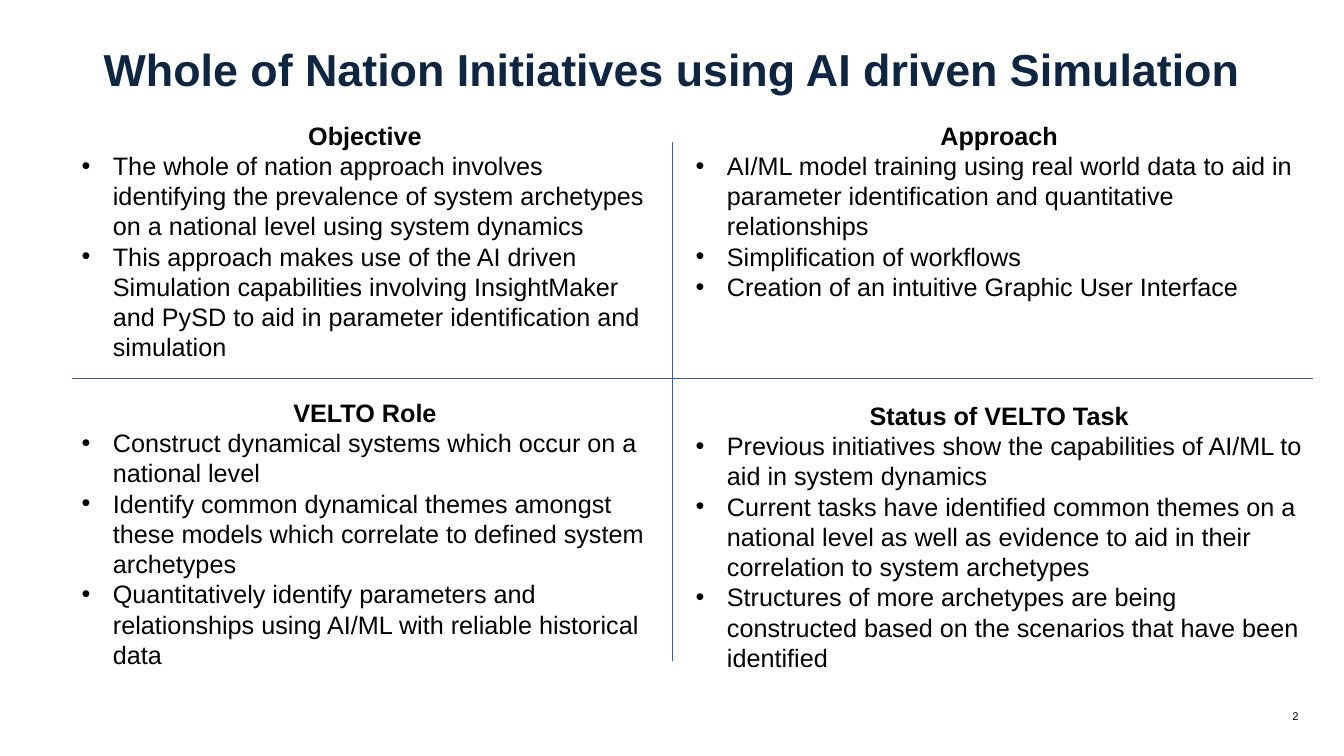
from dataclasses import dataclass

from lxml import etree
from pptx import Presentation
from pptx import util as u
from pptx.dml.color import RGBColor
from pptx.enum import shapes, text
from pptx.oxml.ns import qn

INK, NAVY, BLUE = "000000", "0E2641", "335EAC"
LEFT, RIGHT = (0.71, 5.82), (6.8, 6.22)


@dataclass
class Panel:
    col: tuple[float, float]
    top: float
    high: float
    head: str
    items: list[str]


@dataclass
class Rule:
    start: tuple[float, float]
    end: tuple[float, float]


PANELS = [
    Panel(LEFT, 1.14, 3.13, "Objective", [
        "The whole of nation approach involves identifying the prevalence of system archetypes "
        "on a national level using system dynamics",
        "This approach makes use of the AI driven Simulation capabilities involving InsightMaker "
        "and PySD to aid in parameter identification and simulation",
    ]),
    Panel(RIGHT, 1.14, 1.92, "Approach", [
        "AI/ML model training using real world data to aid in parameter identification "
        "and quantitative relationships",
        "Simplification of workflows",
        "Creation of an intuitive Graphic User Interface",
    ]),
    Panel(LEFT, 3.89, 2.83, "VELTO Role", [
        "Construct dynamical systems which occur on a national level",
        "Identify common dynamical themes amongst these models which correlate to defined "
        "system archetypes",
        "Quantitatively identify parameters and relationships using AI/ML with reliable "
        "historical data",
    ]),
    Panel(RIGHT, 3.92, 3.13, "Status of VELTO Task", [
        "Previous initiatives show the capabilities of AI/ML to aid in system dynamics",
        "Current tasks have identified common themes on a national level as well as evidence "
        "to aid in their correlation to system archetypes",
        "Structures of more archetypes are being constructed based on the scenarios that have "
        "been identified",
    ]),
]
RULES = [Rule((6.67, 6.56), (6.67, 1.41)), Rule((0.71, 3.75), (13.02, 3.75))]


def paint(code: str) -> RGBColor:
    return RGBColor.from_string(code)


def assign(obj, form: dict) -> None:
    for key, val in form.items():
        setattr(obj, key, val)


def place(shape, left: float, top: float, wide: float, high: float) -> None:
    assign(shape, dict(left=u.Inches(left), top=u.Inches(top),
                       width=u.Inches(wide), height=u.Inches(high)))


def write(para, words: str, size: int, code: str, bold: bool, form: dict) -> None:
    assign(para, form)
    run = para.add_run()
    run.text = words
    assign(run.font, dict(name="Arial", size=u.Pt(size), bold=bold))
    run.font.color.rgb = paint(code)


def indent(para, mark: str = "") -> None:
    props = para._p.get_or_add_pPr()
    size = u.Inches(0.31) if mark else 0
    props.set("marL", str(size))
    props.set("indent", str(-size))
    if mark:
        etree.SubElement(props, qn("a:buFont")).set("typeface", "Arial")
        etree.SubElement(props, qn("a:buChar")).set("char", mark)
    else:
        etree.SubElement(props, qn("a:buNone"))


def fill(shape, panel: Panel) -> None:
    left, wide = panel.col
    place(shape, left, panel.top, wide, panel.high)
    frame = shape.text_frame
    assign(frame, dict(word_wrap=True, vertical_anchor=text.MSO_ANCHOR.TOP,
                       auto_size=text.MSO_AUTO_SIZE.SHAPE_TO_FIT_TEXT))
    para = frame.paragraphs[0]
    write(para, panel.head, 18, INK, True,
          dict(alignment=text.PP_ALIGN.CENTER, space_before=u.Pt(0)))
    indent(para)
    for item in panel.items:
        para = frame.add_paragraph()
        write(para, item, 18, INK, False,
              dict(alignment=text.PP_ALIGN.LEFT, space_before=u.Pt(0)))
        indent(para, "•")


def draw(slide, rule: Rule) -> None:
    ends = [u.Inches(val) for val in rule.start + rule.end]
    line = slide.shapes.add_connector(shapes.MSO_CONNECTOR.STRAIGHT, *ends)
    line.line.color.rgb = paint(BLUE)
    line.line.width = u.Pt(0.5)
    etree.SubElement(line._element.spPr, qn("a:effectLst"))


def main() -> None:
    deck = Presentation()
    assign(deck, dict(slide_width=u.Inches(13.33), slide_height=u.Inches(7.5)))
    slide = deck.slides.add_slide(deck.slide_layouts.get_by_name("Comparison"))

    title = slide.shapes.title
    place(title, 0.47, 0.4, 12.4, 0.6)
    assign(title.text_frame, dict(word_wrap=True, auto_size=text.MSO_AUTO_SIZE.NONE,
                                  vertical_anchor=text.MSO_ANCHOR.BOTTOM))
    write(title.text_frame.paragraphs[0],
          "Whole of Nation Initiatives using AI driven Simulation", 32, NAVY, True,
          dict(alignment=text.PP_ALIGN.CENTER, line_spacing=0.9))

    for rule in RULES:
        draw(slide, rule)
    bodies = [shape for shape in slide.placeholders if shape.placeholder_format.idx > 0]
    for shape, panel in zip(bodies, PANELS):
        fill(shape, panel)

    page = slide.shapes.add_textbox(0, 0, 0, 0)
    place(page, 12.2, 7, 0.68, 0.2)
    assign(page.text_frame, dict(word_wrap=True, vertical_anchor=text.MSO_ANCHOR.MIDDLE,
                                 margin_left=0, margin_right=0, margin_top=0, margin_bottom=0))
    write(page.text_frame.paragraphs[0], "2", 8, INK, False,
          dict(alignment=text.PP_ALIGN.RIGHT))
    deck.save("out.pptx")


if __name__ == "__main__":
    main()
